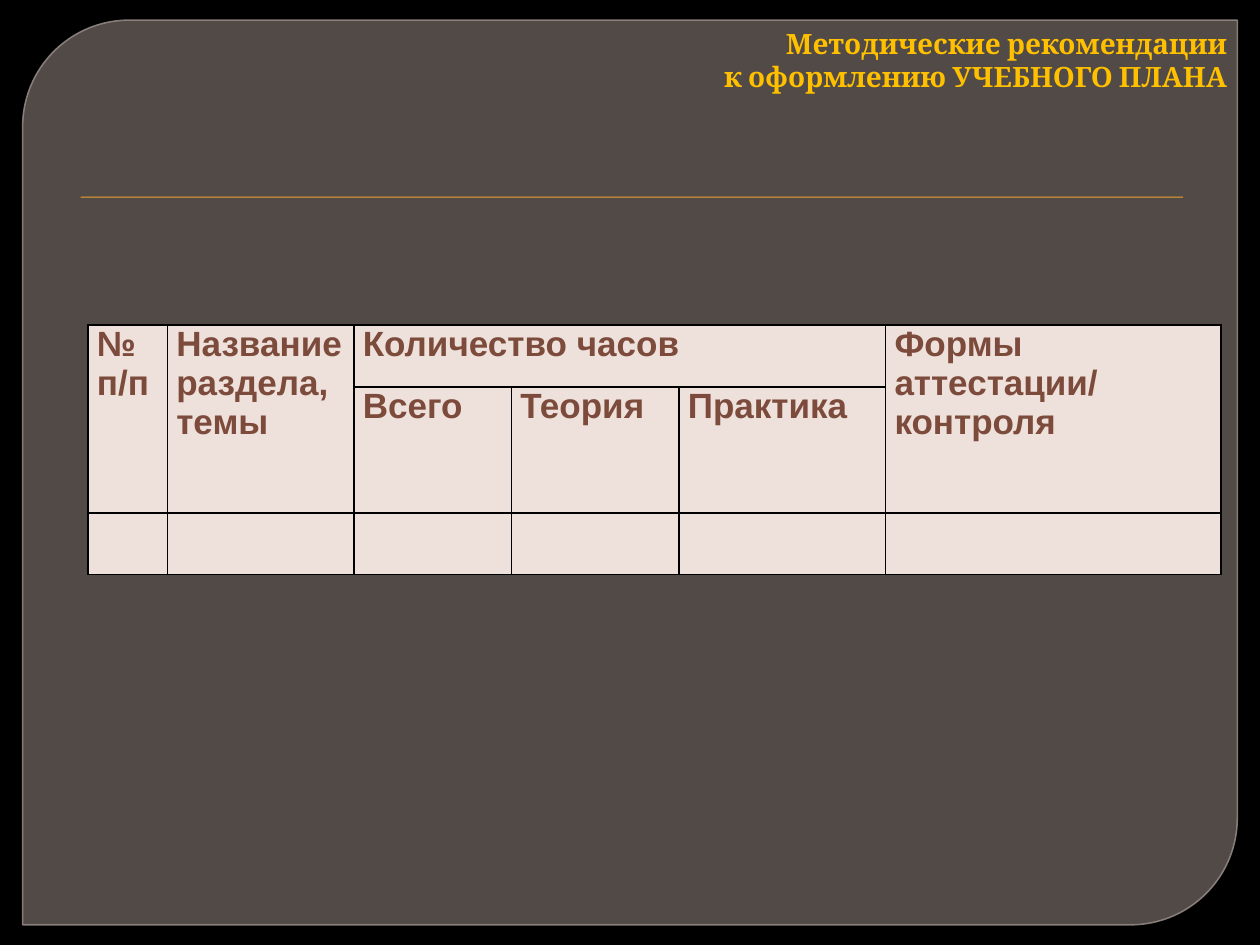
from dataclasses import dataclass

from lxml.etree import SubElement
from pptx import Presentation
from pptx.dml.color import RGBColor
from pptx.enum.shapes import MSO_SHAPE
from pptx.enum.text import MSO_AUTO_SIZE, PP_ALIGN
from pptx.oxml import parse_xml
from pptx.oxml.ns import nsdecls, qn
from pptx.util import Inches, Pt


@dataclass(frozen=True)
class Theme:
    background: str = "000000"
    panel: str = "7D726E"
    panel_line: str = "948A85"
    accent: str = "F0A22E"
    title: str = "FFC000"
    cell: str = "EEE0DB"
    cell_text: str = "7C4B3B"
    border: str = "000000"
    title_font: str = "Cambria"
    table_font: str = "Arial"
    title_size: int = 16
    table_size: int = 20


THEME = Theme()


def rgb(color):
    return RGBColor.from_string(color)


def set_alpha(color_format, percent):
    color = color_format._xFill.find(qn("a:srgbClr"))
    SubElement(color, qn("a:alpha"), val=str(percent * 1000))


def write_lines(frame, lines, font, size, color, alignment=PP_ALIGN.LEFT):
    for index, line in enumerate(lines):
        paragraph = frame.add_paragraph() if index else frame.paragraphs[0]
        paragraph.alignment = alignment
        run = paragraph.add_run()
        run.text = line
        run.font.name = font
        run.font.size = Pt(size)
        run.font.bold = True
        run.font.color.rgb = rgb(color)


def add_backdrop(slide, left, top, width, height):
    # Translucent panel with two rounded corners
    panel = slide.shapes.add_shape(
        MSO_SHAPE.ROUND_2_DIAG_RECTANGLE,
        Inches(left), Inches(top), Inches(width), Inches(height))
    panel.shadow.inherit = False
    panel.adjustments[0] = 0.118
    panel.adjustments[1] = 0
    panel.fill.solid()
    panel.fill.fore_color.rgb = rgb(THEME.panel)
    panel.line.width = Pt(0.87)
    panel.line.color.rgb = rgb(THEME.panel_line)
    properties = panel._element.spPr
    for fill, percent in ((properties.find(qn("a:solidFill")), 65),
                          (properties.find(qn("a:ln")).find(qn("a:solidFill")), 88)):
        SubElement(fill.find(qn("a:srgbClr")), qn("a:alpha"), val=str(percent * 1000))

    # Thin accent rule
    rule = slide.shapes.add_shape(
        MSO_SHAPE.RECTANGLE,
        Inches(left + 0.46), Inches(top + 1.4), Inches(8.75), Inches(0.01))
    rule.shadow.inherit = False
    rule.fill.solid()
    rule.fill.fore_color.rgb = rgb(THEME.accent)
    rule.line.fill.background()


def add_title(slide, left, top, width, height):
    box = slide.shapes.add_textbox(
        Inches(left), Inches(top), Inches(width), Inches(height))
    frame = box.text_frame
    frame.word_wrap = True
    frame.auto_size = MSO_AUTO_SIZE.SHAPE_TO_FIT_TEXT
    write_lines(frame, ["Методические рекомендации", "к оформлению УЧЕБНОГО ПЛАНА"],
                THEME.title_font, THEME.title_size, THEME.title, PP_ALIGN.RIGHT)


def style_cell(cell):
    cell.fill.solid()
    cell.fill.fore_color.rgb = rgb(THEME.cell)
    properties = cell._tc.get_or_add_tcPr()
    for index, side in enumerate(("lnL", "lnR", "lnT", "lnB")):
        properties.insert(index, parse_xml(
            f'<a:{side} {nsdecls("a")} w="{Pt(1)}"><a:solidFill>'
            f'<a:srgbClr val="{THEME.border}"/></a:solidFill></a:{side}>'))


def add_plan_table(slide, left, top, column_widths, row_heights):
    table = slide.shapes.add_table(
        len(row_heights), len(column_widths), Inches(left), Inches(top),
        Inches(sum(column_widths)), Inches(sum(row_heights))).table
    table.first_row = table.horz_banding = False
    for column, width in zip(table.columns, column_widths):
        column.width = Inches(width)
    for row, height in zip(table.rows, row_heights):
        row.height = Inches(height)
    for cell in table.iter_cells():
        style_cell(cell)

    # Headings spanning two rows, and the group heading over the hours
    for column in (0, 1, 5):
        table.cell(0, column).merge(table.cell(1, column))
    table.cell(0, 2).merge(table.cell(0, 4))

    headings = {
        (0, 0): ["№", "п/п"],
        (0, 1): ["Название раздела,", "темы"],
        (0, 2): ["Количество часов"],
        (0, 5): ["Формы", "аттестации/", "контроля"],
        (1, 2): ["Всего"],
        (1, 3): ["Теория"],
        (1, 4): ["Практика"],
    }
    for position, lines in headings.items():
        cell = table.cell(*position)
        cell.margin_left = cell.margin_right = Inches(0.07)
        cell.margin_top = cell.margin_bottom = 0
        write_lines(cell.text_frame, lines,
                    THEME.table_font, THEME.table_size, THEME.cell_text)


def main():
    presentation = Presentation()
    presentation.slide_width = Inches(10)
    presentation.slide_height = Inches(7.5)
    slide = presentation.slides.add_slide(presentation.slide_layouts[6])
    slide.background.fill.solid()
    slide.background.fill.fore_color.rgb = rgb(THEME.background)

    add_backdrop(slide, 0.18, 0.16, 9.64, 7.18)
    add_title(slide, 0.31, 0.16, 9.53, 0.64)
    add_plan_table(slide, 0.7, 2.58,
                   [0.63, 1.48, 1.25, 1.33, 1.64, 2.66], [0.49, 0.84, 0.49])
    presentation.save("out.pptx")


if __name__ == "__main__":
    main()
